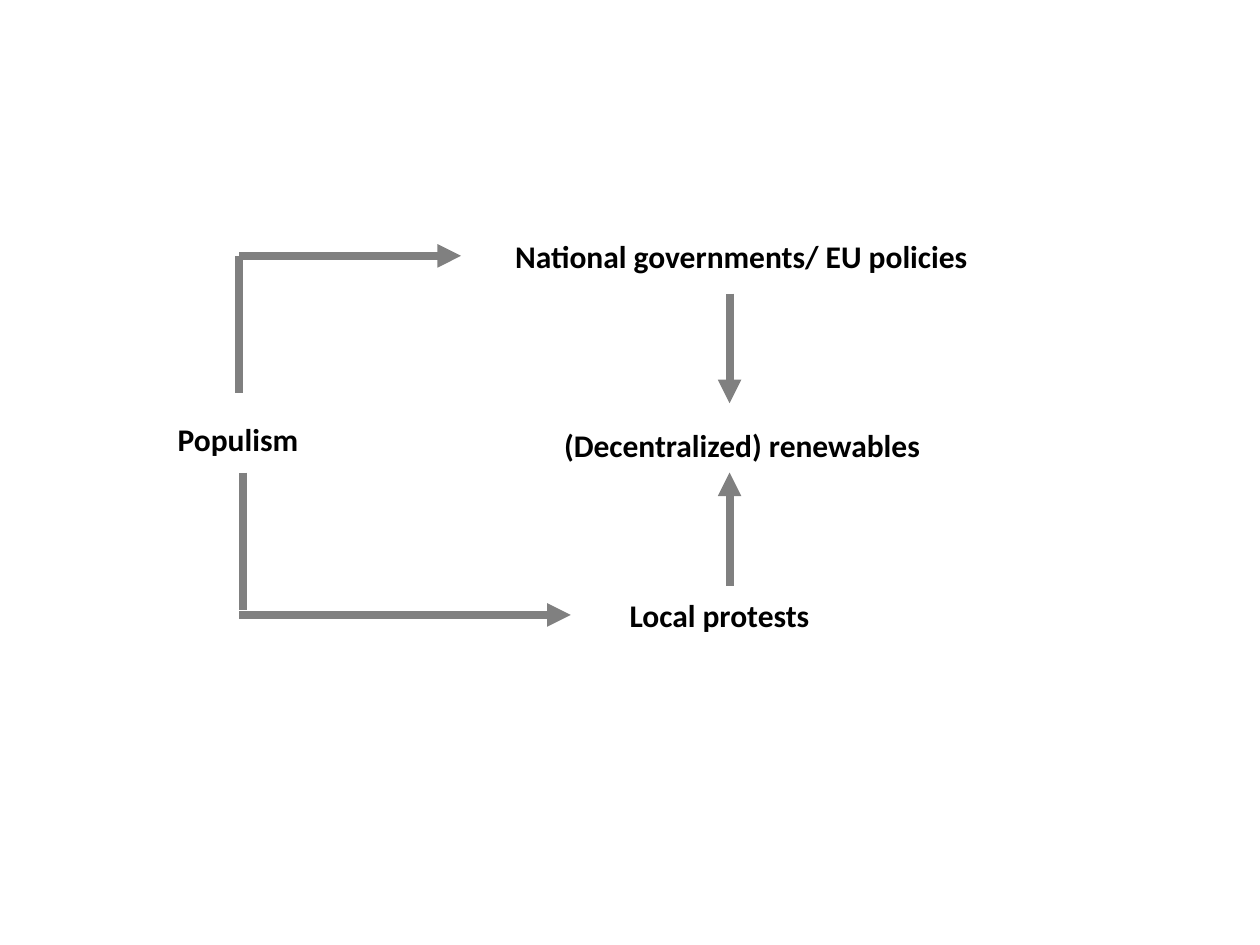
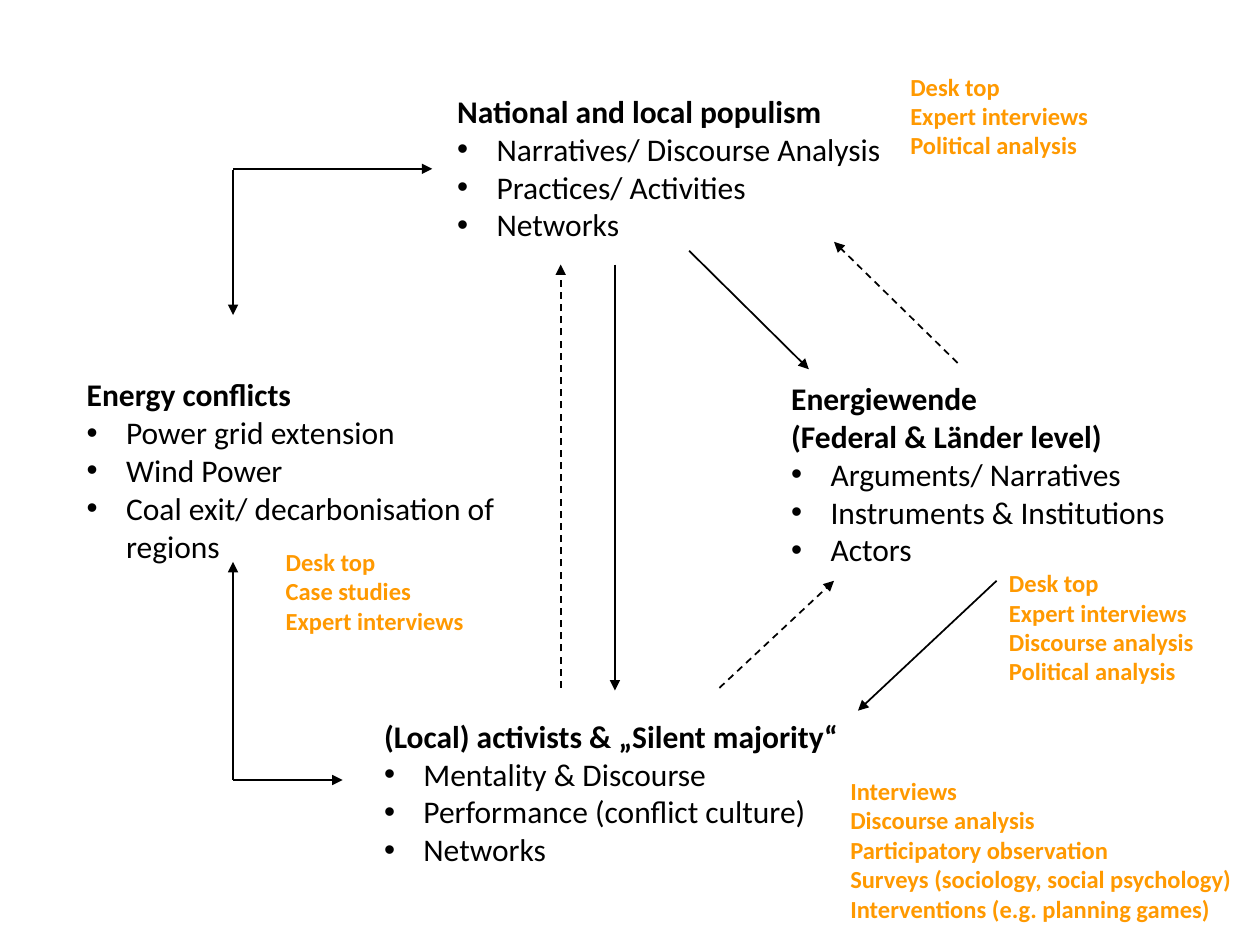
import pptx
import pptx.util
import pptx.dml.color
import pptx.enum.dml
import pptx.enum.shapes
import pptx.enum.text
import pptx.oxml.ns
import lxml.etree

Pt = pptx.util.Pt
RGB = pptx.dml.color.RGBColor
ALIGN = pptx.enum.text.PP_ALIGN
qn = pptx.oxml.ns.qn

FONT = "Calibri"
COLORS = {"text": "000000", "arrow": "808080", "method": "FF9900"}
INDENT = Pt(22.5)


def add_text(slide, box, head, items=(), size=18, color="text", align=ALIGN.LEFT):
    frame = slide.shapes.add_textbox(*[Pt(v) for v in box]).text_frame
    frame.word_wrap = True
    frame.auto_size = pptx.enum.text.MSO_AUTO_SIZE.SHAPE_TO_FIT_TEXT
    frame.text = "\n".join([*head, *items])
    for index, para in enumerate(frame.paragraphs):
        para.alignment = align
        listed = index >= len(head)
        if listed:
            props = para._p.get_or_add_pPr()
            props.set("marL", str(INDENT))
            props.set("indent", str(-INDENT))
            lxml.etree.SubElement(props, qn("a:buFont")).set("typeface", "Arial")
            lxml.etree.SubElement(props, qn("a:buChar")).set("char", "•")
        for run in para.runs:
            run.font.name = FONT
            run.font.size = Pt(size)
            run.font.bold = not listed
            run.font.color.rgb = RGB.from_string(COLORS[color])


def add_line(slide, ends, color, width, arrow=True, dashed=False):
    straight = pptx.enum.shapes.MSO_CONNECTOR.STRAIGHT
    link = slide.shapes.add_connector(straight, *[Pt(v) for v in ends])
    link.line.color.rgb = RGB.from_string(COLORS[color])
    link.line.width = Pt(width)
    if dashed:
        link.line.dash_style = pptx.enum.dml.MSO_LINE.DASH
    if arrow:
        tail = lxml.etree.SubElement(link.line._get_or_add_ln(), qn("a:tailEnd"))
        tail.set("type", "triangle")
    lxml.etree.SubElement(link._element.spPr, qn("a:effectLst"))


deck = pptx.Presentation()
deck.slide_width = Pt(720)
deck.slide_height = Pt(540)
blank = deck.slide_layouts[6]

slide = deck.slides.add_slide(blank)
labels = [
    ("National governments/ EU policies", 270.7, 131.8, 306),
    ("(Decentralized) renewables", 293.8, 239.8, 260.6),
    ("Local protests", 311.8, 337, 198.7),
    ("Populism", 87.8, 236.2, 96.5),
]
for label, left, top, width in labels:
    add_text(slide, (left, top, width, 29), [label], align=ALIGN.CENTER)

mid, side, upper, lower = 416.9, 136.8, 146.2, 351.4
arrows = [
    (mid, 167.8, mid, 230.4),
    (mid, 334.8, mid, 270),
    (side, upper, 263.5, upper),
    (side, lower, 326.2, lower),
]
for ends in arrows:
    add_line(slide, ends, "arrow", 4.5)
for ends in [(side, upper, side, 224.6), (139, 270, 139, 348.5)]:
    add_line(slide, ends, "arrow", 4.5, arrow=False)

slide = deck.slides.add_slide(blank)
topics = [
    ((254.2, 49, 293, 94.3), "National and local populism",
     ["Narratives/ Discourse Analysis", "Practices/ Activities", "Networks"]),
    ((42.5, 211, 254.9, 116.6), "Energy conflicts",
     ["Power grid extension", "Wind Power", "Coal exit/ decarbonisation of regions"]),
    ((212.4, 406.1, 357.1, 94.3), "(Local) activists & „Silent majority“",
     ["Mentality & Discourse", "Performance (conflict culture)", "Networks"]),
    ((445, 213.1, 275, 116.6), "Energiewende\v(Federal & Länder level)",
     ["Arguments/ Narratives", "Instruments & Institutions", "Actors"]),
]
for box, head, items in topics:
    add_text(slide, box, [head], items)

side, upper, lower = 133.2, 96.5, 445.7
solid = [
    (351.4, 151.2, 351.4, 394.6),
    (393.8, 143.3, 462.2, 211),
    (side, upper, 247, upper),
    (side, 97.2, side, 180),
    (side, lower, side, 321.1),
    (side, lower, 195.8, lower),
    (569.5, 331.9, 490.3, 406.1),
]
dashed = [
    (411.1, 393.1, 476.6, 331.9),
    (547.2, 207.4, 476.6, 138.2),
    (320.4, 393.1, 320.4, 151.2),
]
for ends in solid:
    add_line(slide, ends, "text", 1)
for ends in dashed:
    add_line(slide, ends, "text", 1, dashed=True)

methods = [
    ((156.2, 308.9, 153.4, 58.3), ["Desk top", "Case studies", "Expert interviews"]),
    ((478.8, 439.9, 232.6, 92.2),
     ["Interviews", "Discourse analysis", "Participatory observation",
      "Surveys (sociology, social psychology)", "Interventions (e.g. planning games)"]),
    ((569.5, 321.1, 150, 74.9),
     ["Desk top", "Expert interviews", "Discourse analysis", "Political analysis"]),
    ((513.1, 37.4, 153.4, 58.3), ["Desk top", "Expert interviews", "Political analysis"]),
]
for box, lines in methods:
    add_text(slide, box, lines, size=14, color="method")

deck.save("out.pptx")
